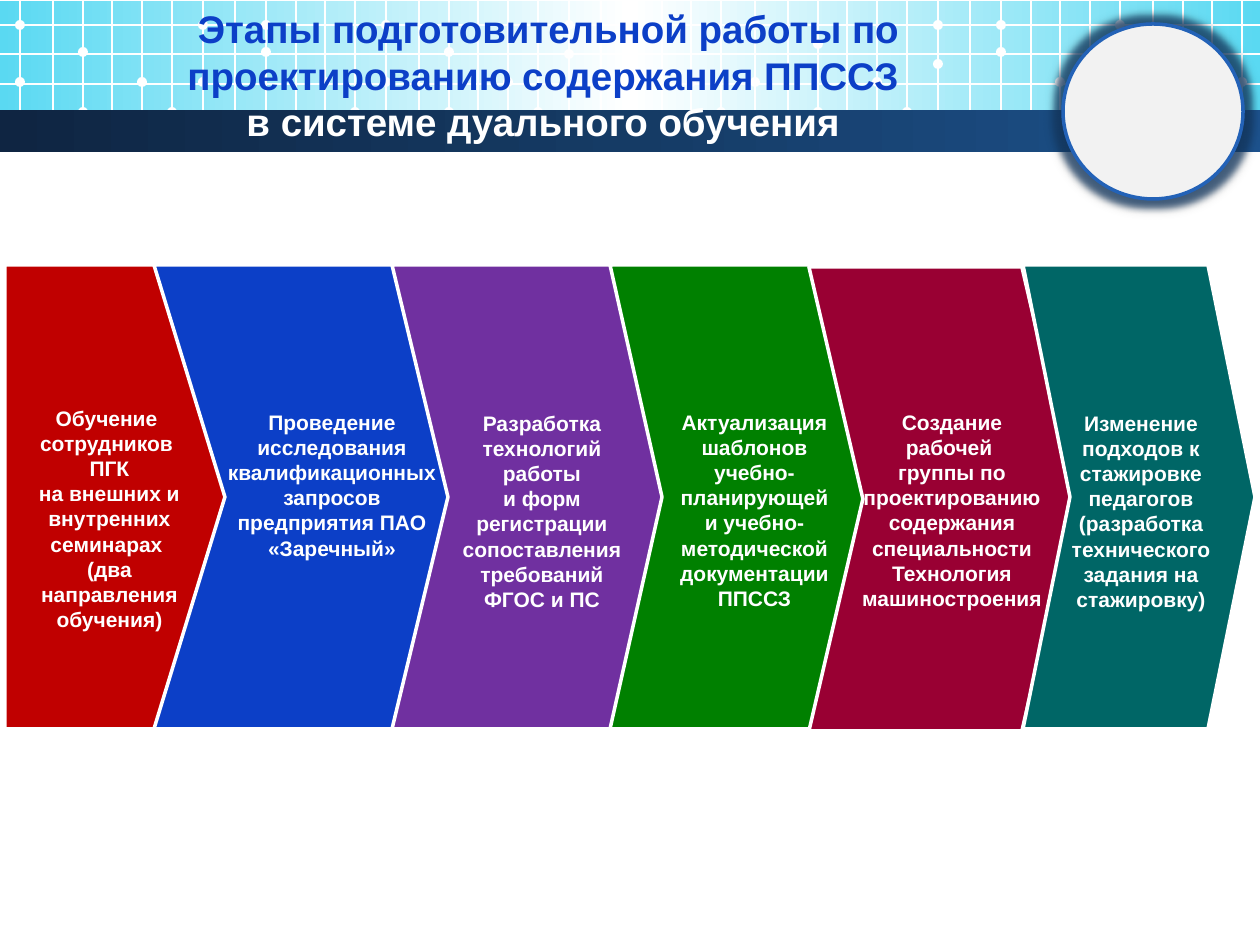
import copy

import pptx
import pptx.dml.color
import pptx.enum.shapes
import pptx.enum.text
import pptx.oxml.ns
import pptx.util
from lxml import etree

RGB = pptx.dml.color.RGBColor
MSO_SHAPE = pptx.enum.shapes.MSO_SHAPE
ANCHOR = pptx.enum.text.MSO_ANCHOR
AUTO_SIZE = pptx.enum.text.MSO_AUTO_SIZE
CENTER = pptx.enum.text.PP_ALIGN.CENTER
Pt = pptx.util.Pt
qn = pptx.oxml.ns.qn

EMU_PER_PX = 914400 / 126
WIDTH, HEIGHT = 1260, 945

WHITE = RGB(0xFF, 0xFF, 0xFF)
CYAN = RGB(0x5A, 0xD9, 0xF2)
MIDNIGHT = RGB(0x0F, 0x25, 0x42)
NAVY = RGB(0x15, 0x3B, 0x65)
STEEL = RGB(0x1D, 0x52, 0x8D)
PALE_GRAY = RGB(0xF2, 0xF2, 0xF2)
RING_BLUE = RGB(0x23, 0x62, 0xB7)
BLACK = RGB(0, 0, 0)
RED = RGB(0xC0, 0, 0)
BLUE = RGB(0x0C, 0x3F, 0xC7)
PURPLE = RGB(0x70, 0x30, 0xA0)
GREEN = RGB(0, 0x80, 0)
CRIMSON = RGB(0x99, 0, 0x33)
TEAL = RGB(0, 0x66, 0x66)

TITLE_FONT = {"name": "Arial", "size": Pt(22), "bold": True}
STAGE_FONT = {"name": "Arial", "size": Pt(12), "bold": True}

# The header grid repeats in tiles: origin, dot height in column 2 and in column 6
TILES = [(20, 52, 82), (386, 52, 54), (755, 44, 64), (1120, 52, 82)]
COLUMNS = [0, 33, 63, 92, 122, 152, 183, 215, 246, 276, 305, 335]
ROWS = [25, 54, 84, 112]
DOTS = [(0, 25), (0, 82), (2, 112), (4, 82), (5, 112), (6, 25),
        (8, 25), (8, 52), (10, 82), (11, 112)]
DOT_SIZE = 10

STAGE_HEIGHT = 464
# Colour; left, shoulder, point depth, top; text box left, top, width, height; paragraphs
STAGES = [
    (RED, (5, 188, 45, 265), (15, 399, 189, 242),
     ["Обучение ", "сотрудников ", "ПГК", "на внешних и внутренних семинарах ",
      "(два направления обучения)"]),
    (BLUE, (154, 399, 71, 265), (213, 403, 238, 165),
     ["Проведение исследования квалификационных запросов предприятия ПАО «Заречный»"]),
    (PURPLE, (392, 619, 56, 265), (436, 404, 212, 217),
     ["Разработка технологий работы",
      "и форм регистрации сопоставления требований ФГОС и ПС"]),
    (GREEN, (610, 816, 52, 265), (660, 403, 189, 217),
     ["Актуализация шаблонов учебно-планирующей и учебно-методической документации",
      "ППССЗ"]),
    (CRIMSON, (809, 1022, 54, 267), (848, 403, 208, 217),
     ["Создание рабочей ",
      "группы по проектированию содержания специальности Технология машиностроения"]),
    (TEAL, (1023, 1208, 47, 265), (1057, 404, 168, 217),
     ["Изменение подходов к стажировке", "педагогов",
      "(разработка технического задания на стажировку)"]),
]


def px(length):
    return round(length * EMU_PER_PX)


def set_format(target, values, **extra):
    for name, value in {**values, **extra}.items():
        setattr(target, name, value)


def paint(shape, fill=None, line=None, line_width=2):
    shape.shadow.inherit = False
    if fill is not None:
        shape.fill.solid()
        shape.fill.fore_color.rgb = fill
    if line is None:
        shape.line.fill.background()
    else:
        shape.line.color.rgb = line
        shape.line.width = Pt(line_width)


def add_preset(slide, kind, box, **look):
    shape = slide.shapes.add_shape(kind, *map(px, box))
    paint(shape, **look)
    return shape


def add_gradient_band(slide, box, colors):
    """Adds a rectangle shaded left to right through three evenly spaced colours."""
    band = add_preset(slide, MSO_SHAPE.RECTANGLE, box)
    band.fill.gradient()
    band.fill.gradient_angle = 0
    stop_list = band._element.spPr.find(".//" + qn("a:gsLst"))
    stop_list.insert(1, copy.deepcopy(stop_list[0]))
    for index, (stop, color) in enumerate(zip(band.fill.gradient_stops, colors)):
        stop.position = index / 2
        stop.color.rgb = color


def add_grid_line(slide, *ends):
    line = slide.shapes.add_connector(
        pptx.enum.shapes.MSO_CONNECTOR.STRAIGHT, *map(px, ends))
    line.line.color.rgb = WHITE
    line.line.width = Pt(0.75)
    etree.SubElement(line._element.spPr, qn("a:effectLst"))


def add_grid(slide):
    for origin, third_column_y, seventh_column_y in TILES:
        dots = DOTS + [(2, third_column_y), (6, seventh_column_y)]
        for column, offset in enumerate(COLUMNS):
            x = origin + offset
            if x > WIDTH - DOT_SIZE:
                break
            add_grid_line(slide, x, 0, x, 139)
            for y in (y for dot_column, y in dots if dot_column == column):
                box = (x - DOT_SIZE // 2, y - DOT_SIZE // 2, DOT_SIZE, DOT_SIZE)
                add_preset(slide, MSO_SHAPE.OVAL, box, fill=WHITE)
    for y in ROWS:
        add_grid_line(slide, 0, y, WIDTH, y)


def add_effect(shape, tag, color, opacity, **attributes):
    effects = shape._element.spPr.find(qn("a:effectLst"))
    effect = etree.SubElement(effects, qn(tag), attributes)
    effect_color = etree.SubElement(effect, qn("a:srgbClr"), val=str(color))
    etree.SubElement(effect_color, qn("a:alpha"), val=str(opacity * 1000))


def add_medallion(slide):
    medallion = add_preset(slide, MSO_SHAPE.OVAL, (1063, 24, 180, 175),
                           fill=PALE_GRAY, line=RING_BLUE)
    add_effect(medallion, "a:glow", NAVY, 70, rad=str(Pt(8)))
    add_effect(medallion, "a:outerShdw", BLACK, 40, blurRad=str(Pt(5)), dist="0")


def format_title(slide):
    title = slide.shapes.title
    slide.shapes._spTree.append(title._element)
    set_format(title, {"left": px(25), "top": px(6), "width": px(1047), "height": px(137)})
    frame = title.text_frame
    set_format(frame, {"word_wrap": True, "auto_size": AUTO_SIZE.NONE,
                       "vertical_anchor": ANCHOR.MIDDLE})
    paragraph = frame.paragraphs[0]
    set_format(paragraph, {"alignment": CENTER, "line_spacing": Pt(26.7)})
    lines = [("Этапы подготовительной работы по проектированию содержания ППССЗ ", BLUE),
             ("в системе дуального обучения ", WHITE)]
    for index, (text, color) in enumerate(lines):
        if index:
            paragraph.add_line_break()
        run = paragraph.add_run()
        run.text = text
        set_format(run.font, TITLE_FONT)
        run.font.color.rgb = color


def add_chevron(slide, color, left, shoulder, depth, top, notched):
    middle, bottom = top + STAGE_HEIGHT // 2, top + STAGE_HEIGHT
    points = [(shoulder, top), (shoulder + depth, middle), (shoulder, bottom), (left, bottom)]
    if notched:
        points.append((left + depth, middle))
    builder = slide.shapes.build_freeform(left, top, scale=EMU_PER_PX)
    builder.add_line_segments(points, close=True)
    paint(builder.convert_to_shape(), fill=color, line=WHITE)


def add_stage_text(slide, box, texts):
    frame = slide.shapes.add_textbox(*map(px, box)).text_frame
    set_format(frame, {"word_wrap": True, "auto_size": AUTO_SIZE.SHAPE_TO_FIT_TEXT})
    for index, text in enumerate(texts):
        paragraph = frame.add_paragraph() if index else frame.paragraphs[0]
        paragraph.text = text
        set_format(paragraph, {"alignment": CENTER, "line_spacing": Pt(14.4)})
        set_format(paragraph.font, STAGE_FONT)
        paragraph.font.color.rgb = WHITE


def main():
    presentation = pptx.Presentation()
    set_format(presentation, {"slide_width": px(WIDTH), "slide_height": px(HEIGHT)})
    slide = presentation.slides.add_slide(presentation.slide_layouts[5])
    add_gradient_band(slide, (0, 1, WIDTH, 129), [CYAN, WHITE, CYAN])
    add_grid(slide)
    add_gradient_band(slide, (0, 110, WIDTH, 42), [MIDNIGHT, NAVY, STEEL])
    add_medallion(slide)
    format_title(slide)
    for index, (color, outline, _, _) in enumerate(STAGES):
        add_chevron(slide, color, *outline, notched=index > 0)
    for _, _, box, texts in STAGES:
        add_stage_text(slide, box, texts)
    presentation.save("out.pptx")


if __name__ == "__main__":
    main()
